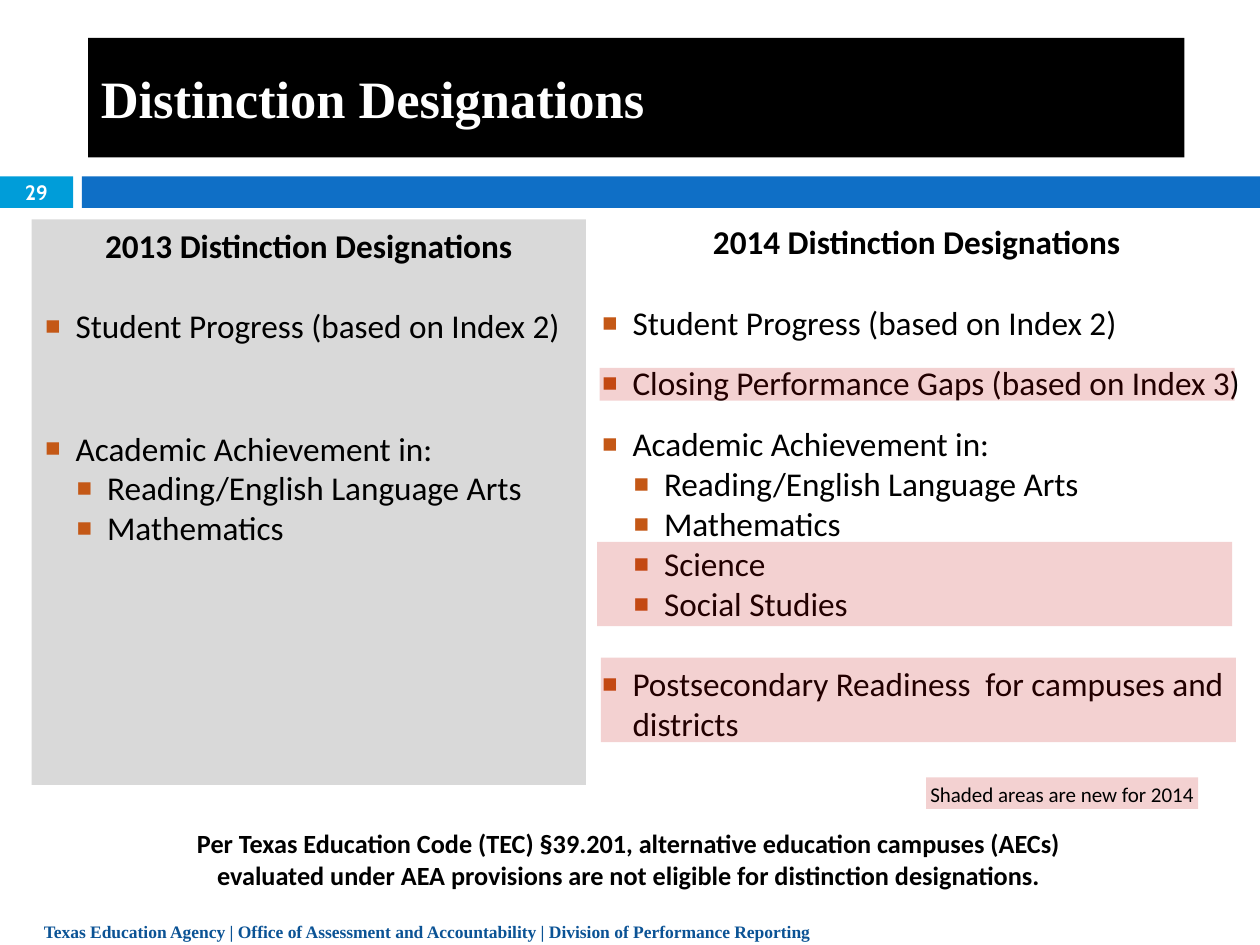
from lxml import etree
from pptx import Presentation, util as u
from pptx.dml.color import RGBColor
from pptx.enum import shapes, text
from pptx.oxml import ns

SANS, SERIF, NUM = "Calibri", "Times New Roman", "Cabin"
BLACK, WHITE, PINK = "000000", "FFFFFF", "C00000"
LEFT, MID = text.PP_ALIGN.LEFT, text.PP_ALIGN.CENTER
LINE, GAP = 23, 12  # points: one line of body text, one small gap

# Each row: text, level, space before in points
COLS = [
    dict(box=(0.25, 1.74, 4.4, 4.49), fill="D9D9D9", edge=0.25,
         head="2013 Distinction Designations", rows=[
             ("Student Progress (based on Index 2)", 0, LINE),
             ("Academic Achievement in:", 0, LINE + 2 * GAP),
             ("Reading/English Language Arts", 1, 0),
             ("Mathematics", 1, 0)]),
    dict(box=(4.55, 1.71, 5.45, 4.34), fill=None, edge=0.37,
         head="2014 Distinction Designations", rows=[
             ("Student Progress (based on Index 2)", 0, LINE),
             ("Closing Performance Gaps (based on Index 3)", 0, GAP),
             ("Academic Achievement in:", 0, GAP),
             ("Reading/English Language Arts", 1, 0),
             ("Mathematics", 1, 0),
             ("Science", 1, 0),
             ("Social Studies", 1, 0),
             ("Postsecondary Readiness  for campuses and districts", 0, LINE)]),
]
BARS = [((0, 1.4, 0.58, 0.25), "009DD9"), ((0.65, 1.4, 9.35, 0.25), "0F6FC6")]
SHADES = [(4.77, 5.22, 5.04, 0.67), (4.74, 4.3, 5.04, 0.67), (4.76, 2.92, 5.04, 0.26)]
KEY = (7.35, 6.17, 2.16, 0.25)
NOTE = ["Per Texas Education Code (TEC) §39.201, alternative education campuses (AECs)",
        "evaluated under AEA provisions are not eligible for distinction designations."]
FOOT = ("Texas Education Agency | Office of Assessment and Accountability"
        " | Division of Performance Reporting")


def paint(fill, hue):
    fill.solid()
    fill.fore_color.rgb = RGBColor.from_string(hue)


def place(shape, box):
    shape.left, shape.top, shape.width, shape.height = map(u.Inches, box)


def write(par, words, size, font=SANS, hue=BLACK, bold=False, align=LEFT):
    run = par.add_run()
    run.text = words
    run.font.size, run.font.name, run.font.bold = u.Pt(size), font, bold
    run.font.color.rgb = RGBColor.from_string(hue)
    par.alignment = align
    par.space_before = u.Pt(0)


def indent(par, edge, hang, mark=None):
    """Set the hanging indent and the square bullet, or no bullet."""
    props = par._p.get_or_add_pPr()
    props.set("marL", str(u.Inches(edge)))
    props.set("indent", str(-u.Inches(hang)))
    if not mark:
        etree.SubElement(props, ns.qn("a:buNone"))
        return
    tint = etree.SubElement(props, ns.qn("a:buClr"))
    etree.SubElement(tint, ns.qn("a:srgbClr"), val="C45816")
    etree.SubElement(props, ns.qn("a:buSzPct"), val="150000")
    etree.SubElement(props, ns.qn("a:buChar"), char=mark)


def block(slide, box, hue, alpha=None):
    shape = slide.shapes.add_shape(shapes.MSO_SHAPE.RECTANGLE, *map(u.Inches, box))
    shape.shadow.inherit = False
    shape.line.fill.background()
    paint(shape.fill, hue)
    if alpha:
        tint = shape._element.spPr.find(".//" + ns.qn("a:srgbClr"))
        etree.SubElement(tint, ns.qn("a:alpha"), val=str(alpha * 1000))
    return shape


def label(slide, box, lines, size, anchor=text.MSO_ANCHOR.TOP, **look):
    frame = slide.shapes.add_textbox(*map(u.Inches, box)).text_frame
    frame.word_wrap, frame.vertical_anchor = True, anchor
    for i, words in enumerate(lines):
        write(frame.add_paragraph() if i else frame.paragraphs[0], words, size, **look)
    return frame


def column(shape, data):
    place(shape, data["box"])
    if data["fill"]:
        paint(shape.fill, data["fill"])
    frame = shape.text_frame
    frame.auto_size = text.MSO_AUTO_SIZE.NONE
    head = frame.paragraphs[0]
    write(head, data["head"], 19, bold=True, align=MID)
    indent(head, 0.38, 0.38)
    for words, level, gap in data["rows"]:
        par = frame.add_paragraph()
        write(par, words, 19)
        par.space_before = u.Pt(gap)
        indent(par, data["edge"] + level * 0.25, 0.25, "▪")


def main():
    deck = Presentation()
    deck.slide_width, deck.slide_height = u.Inches(10), u.Inches(7.5)
    slide = deck.slides.add_slide(deck.slide_layouts[3])
    title, *bodies = slide.placeholders

    place(title, (0.7, 0.3, 8.7, 0.95))
    paint(title.fill, BLACK)
    title.text_frame.auto_size = text.MSO_AUTO_SIZE.NONE
    title.text_frame.vertical_anchor = text.MSO_ANCHOR.MIDDLE
    write(title.text_frame.paragraphs[0], "Distinction Designations", 30, SERIF, WHITE, True)

    for box, hue in BARS:
        block(slide, box, hue)
    label(slide, (0, 1.39, 0.58, 0.27), ["29"], 11.9, text.MSO_ANCHOR.MIDDLE,
          font=NUM, hue=WHITE, bold=True, align=MID)

    for shape, data in zip(bodies, COLS):
        column(shape, data)

    foot = label(slide, (0.25, 7.07, 9, 0.41), [FOOT], 10,
                 font=SERIF, hue="0B5395", bold=True)
    foot.paragraphs[0].line_spacing = u.Pt(26)
    label(slide, (0.62, 6.52, 8.74, 0.58), NOTE, 15, bold=True, align=MID)

    key = block(slide, KEY, PINK, 18).text_frame
    key.margin_left = key.margin_right = key.margin_top = key.margin_bottom = u.Inches(0.03)
    key.vertical_anchor = text.MSO_ANCHOR.TOP
    write(key.paragraphs[0], "Shaded areas are new for 2014", 12, align=MID)
    for box in SHADES:
        block(slide, box, PINK, 18)

    deck.save("out.pptx")


if __name__ == "__main__":
    main()
